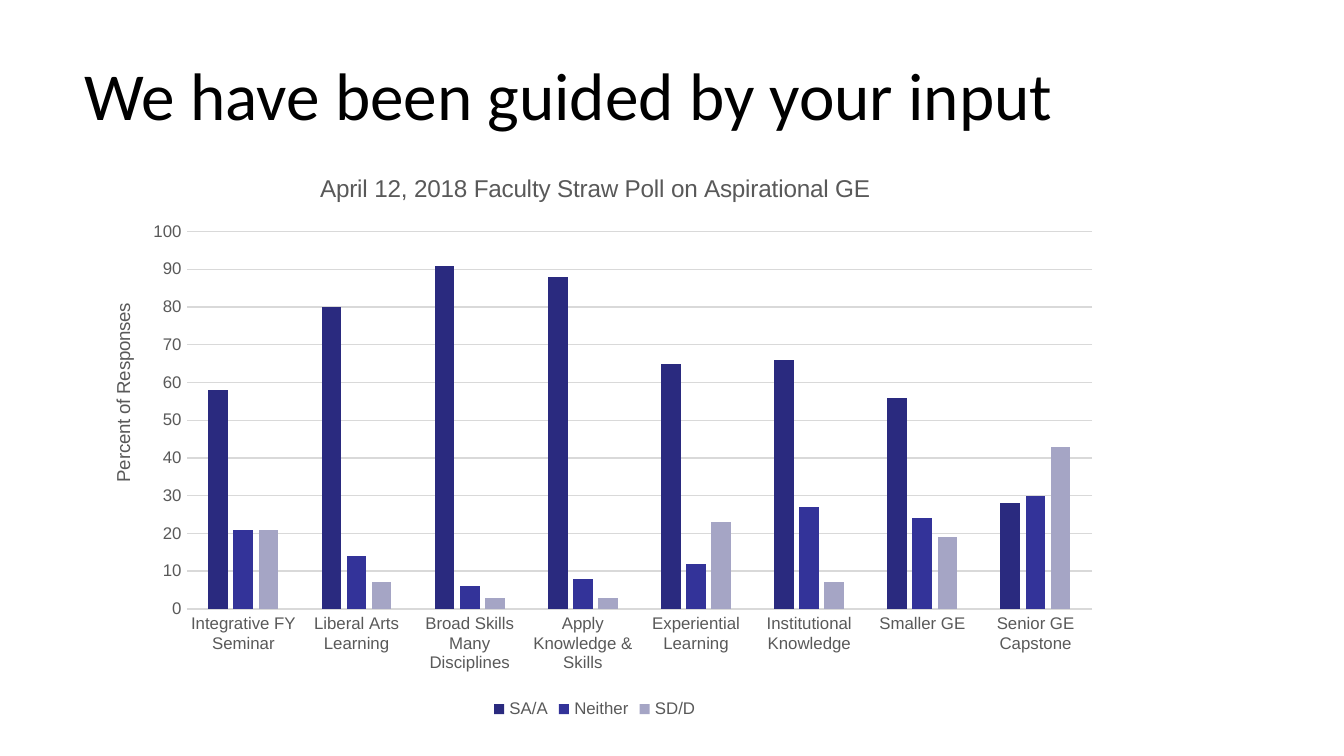
from lxml.etree import SubElement
from pptx import Presentation
from pptx.chart.data import CategoryChartData
from pptx.dml.color import RGBColor
from pptx.enum.chart import XL_CHART_TYPE as ChartType, XL_LEGEND_POSITION as LegendPosition
from pptx.enum.chart import XL_TICK_MARK as TickMark
from pptx.enum.text import MSO_ANCHOR as Anchor
from pptx.oxml.ns import qn
from pptx.util import Inches, Pt

TITLE = "We have been guided by your input"
CHART_TITLE = "April 12, 2018 Faculty Straw Poll on Aspirational GE"
AXIS_TITLE = "Percent of Responses"
CATEGORIES = [
    "Integrative FY Seminar", "Liberal Arts Learning", "Broad Skills Many Disciplines",
    "Apply Knowledge & Skills", "Experiential Learning", "Institutional Knowledge",
    "Smaller GE", "Senior GE Capstone",
]
SERIES = [
    ("SA/A", [58, 80, 91, 88, 65, 66, 56, 28], "2A2A7F"),
    ("Neither", [21, 14, 6, 8, 12, 27, 24, 30], "333399"),
    ("SD/D", [21, 7, 3, 3, 23, 7, 19, 43], "A5A5C5"),
]
AXIS_TITLE_PLACE = {"xMode": "edge", "yMode": "edge", "x": 0.03, "y": 0.26}
THEME = {
    "title_font": "Calibri", "chart_font": "Arial",
    "title": "000000", "label": "595959", "rule": "D9D9D9",
    "title_size": 36, "chart_title_size": 13, "axis_title_size": 10, "label_size": 9,
}


def style_font(font, name, size, color):
    font.name = name
    font.size = Pt(size)
    font.bold = False
    font.color.rgb = RGBColor.from_string(color)


def style_label(font, size=THEME["label_size"]):
    style_font(font, THEME["chart_font"], size, THEME["label"])


def set_chart_text(text_frame, text, size):
    text_frame.text = text
    style_label(text_frame.paragraphs[0].runs[0].font, size)


def style_rule(line):
    line.color.rgb = RGBColor.from_string(THEME["rule"])
    line.width = Pt(0.75)


def place_axis_title(axis_title):
    element = axis_title._element
    layout = element.find(qn("c:layout"))
    if layout is None:
        layout = SubElement(element, qn("c:layout"))
        element.find(qn("c:tx")).addnext(layout)
    manual = SubElement(layout, qn("c:manualLayout"))
    for tag, value in AXIS_TITLE_PLACE.items():
        SubElement(manual, qn(f"c:{tag}")).set("val", str(value))


def add_title(slide):
    box = slide.shapes.add_textbox(Inches(0.5), Inches(0.23), Inches(9), Inches(0.94))
    text_frame = box.text_frame
    text_frame.word_wrap = True
    text_frame.vertical_anchor = Anchor.MIDDLE
    text_frame.margin_left = Inches(0.13)
    text_frame.text = TITLE
    style_font(text_frame.paragraphs[0].runs[0].font,
               THEME["title_font"], THEME["title_size"], THEME["title"])


def add_poll_chart(slide):
    data = CategoryChartData()
    data.categories = CATEGORIES
    for name, values, _ in SERIES:
        data.add_series(name, values)
    chart = slide.shapes.add_chart(
        ChartType.COLUMN_CLUSTERED, Inches(0.57), Inches(1.12), Inches(7.71), Inches(4.27), data
    ).chart
    style_label(chart.font)

    chart.has_title = True
    set_chart_text(chart.chart_title.text_frame, CHART_TITLE, THEME["chart_title_size"])
    chart.chart_title.include_in_layout = False

    chart.has_legend = True
    chart.legend.position = LegendPosition.BOTTOM
    chart.legend.include_in_layout = False
    style_label(chart.legend.font)

    for axis in (chart.category_axis, chart.value_axis):
        axis.major_tick_mark = TickMark.NONE
        axis.minor_tick_mark = TickMark.NONE
        style_label(axis.tick_labels.font)
    style_rule(chart.category_axis.format.line)

    value_axis = chart.value_axis
    value_axis.minimum_scale = 0
    value_axis.maximum_scale = 100
    value_axis.major_unit = 10
    value_axis.format.line.fill.background()
    style_rule(value_axis.major_gridlines.format.line)
    set_chart_text(value_axis.axis_title.text_frame, AXIS_TITLE, THEME["axis_title_size"])
    place_axis_title(value_axis.axis_title)

    plot = chart.plots[0]
    plot.gap_width = 219
    plot.overlap = -27
    plot.vary_by_categories = False
    for series, (_, _, color) in zip(plot.series, SERIES):
        series.format.fill.solid()
        series.format.fill.fore_color.rgb = RGBColor.from_string(color)


def main():
    presentation = Presentation()
    presentation.slide_width = Inches(10)
    presentation.slide_height = Inches(10) * 9 // 16
    slide = presentation.slides.add_slide(presentation.slide_layouts[6])
    add_title(slide)
    add_poll_chart(slide)
    presentation.save("out.pptx")


if __name__ == "__main__":
    main()
